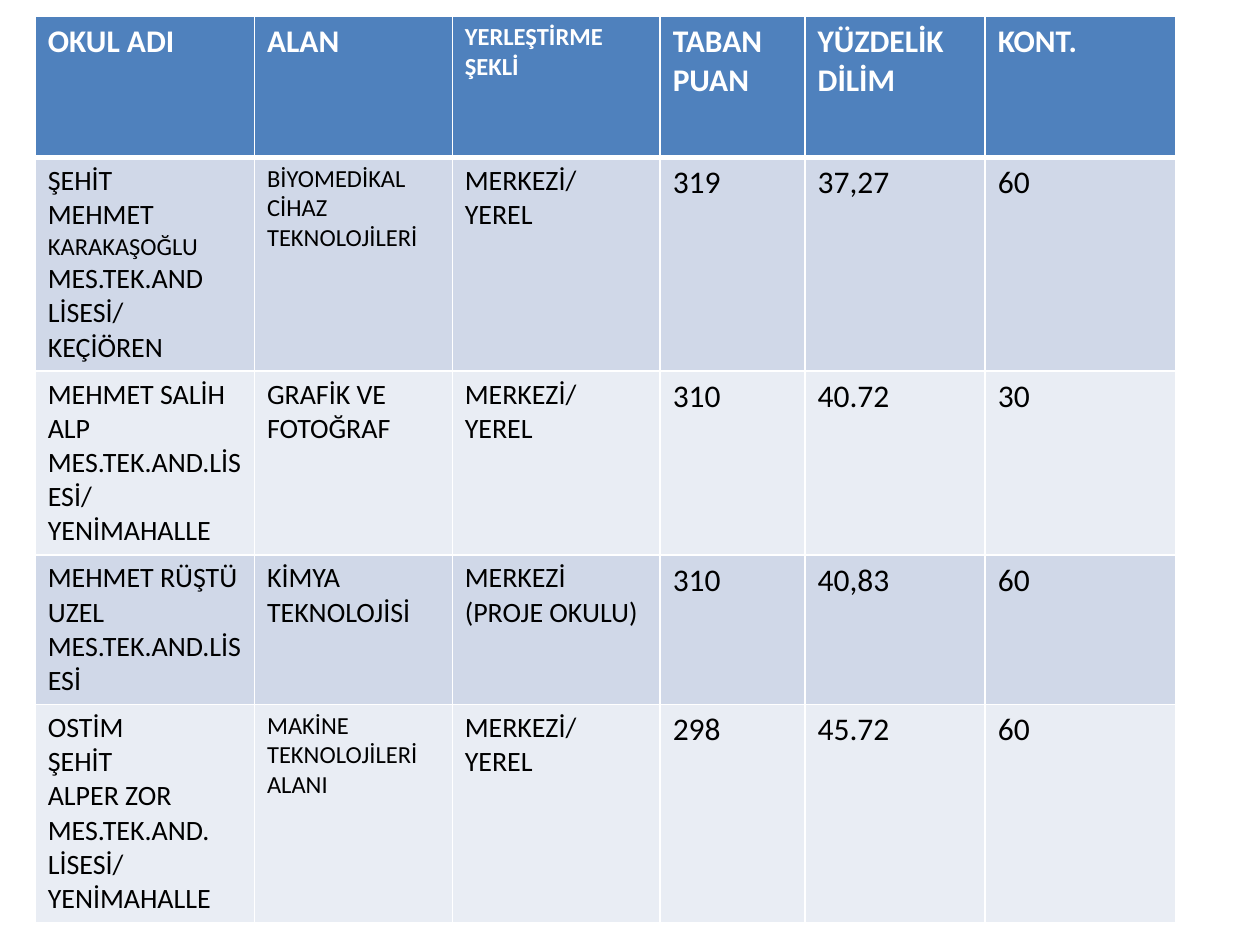
"""Build a slide with a table of vocational schools and their entry scores."""
from dataclasses import dataclass

from lxml.etree import SubElement
from pptx import Presentation
from pptx.dml.color import RGBColor
from pptx.oxml.ns import qn
from pptx.table import _Cell as Cell
from pptx.util import Inches, Pt

FONT = "Calibri"
WHITE, BLACK = "FFFFFF", "000000"
HEADER_FILL = "4F81BD"
BAND_FILLS = ("D0D8E8", "E9EDF4")
THIN, THICK = 1, 3
COLUMN_WIDTHS = (1.74, 1.57, 1.65, 1.15, 1.43, 1.51)
ROW_HEIGHTS = (1.12, 1.67, 1.43, 1.17, 1.7)


@dataclass(frozen=True)
class Entry:
    """Lines of one cell, their size, and sizes of single lines that differ."""
    text: str
    size: float = 18
    exceptions: tuple[tuple[int, float], ...] = ()


@dataclass(frozen=True)
class Look:
    """Colours, weight and horizontal rules of a table row."""
    fill: str
    ink: str
    bold: bool
    top: float
    bottom: float


HEADER = (
    Entry("OKUL ADI"),
    Entry("ALAN"),
    Entry("YERLEŞTİRME ŞEKLİ", 14),
    Entry("TABAN PUAN"),
    Entry("YÜZDELİK\nDİLİM"),
    Entry("KONT."),
)
CENTRAL_OR_LOCAL = Entry("MERKEZİ/\nYEREL", 16)
SCHOOLS = (
    (
        Entry("ŞEHİT\nMEHMET\nKARAKAŞOĞLU\nMES.TEK.AND\nLİSESİ/\nKEÇİÖREN", 16, ((2, 14),)),
        Entry("BİYOMEDİKAL\nCİHAZ\nTEKNOLOJİLERİ", 14),
        CENTRAL_OR_LOCAL, Entry("319"), Entry("37,27"), Entry("60"),
    ),
    (
        Entry("MEHMET SALİH ALP\nMES.TEK.AND.LİSESİ/\nYENİMAHALLE", 16),
        Entry("GRAFİK VE FOTOĞRAF", 16),
        CENTRAL_OR_LOCAL, Entry("310"), Entry("40.72"), Entry("30"),
    ),
    (
        Entry("MEHMET RÜŞTÜ UZEL MES.TEK.AND.LİSESİ", 16),
        Entry("KİMYA TEKNOLOJİSİ", 16),
        Entry("MERKEZİ\n(PROJE OKULU)", 16),
        Entry("310"), Entry("40,83"), Entry("60"),
    ),
    (
        Entry("OSTİM\nŞEHİT\nALPER ZOR\nMES.TEK.AND.\nLİSESİ/\nYENİMAHALLE", 16),
        Entry("MAKİNE\nTEKNOLOJİLERİ ALANI", 14),
        CENTRAL_OR_LOCAL, Entry("298"), Entry("45.72"), Entry("60"),
    ),
)


def colour(code: str) -> RGBColor:
    """Turn a hex string into a colour."""
    return RGBColor.from_string(code)


def rule_cell(cell: Cell, look: Look) -> None:
    """Draw the white borders of a cell."""
    properties = cell._tc.get_or_add_tcPr()
    widths = {"a:lnL": THIN, "a:lnR": THIN, "a:lnT": look.top, "a:lnB": look.bottom}
    for side, width in widths.items():
        line = SubElement(properties, qn(side), w=str(Pt(width)))
        SubElement(SubElement(line, qn("a:solidFill")), qn("a:srgbClr"), val=WHITE)


def fill_cell(cell: Cell, entry: Entry, look: Look) -> None:
    """Give a cell its borders, fill and text."""
    rule_cell(cell, look)
    cell.fill.solid()
    cell.fill.fore_color.rgb = colour(look.fill)
    cell.text = entry.text
    sizes = dict(entry.exceptions)
    for index, paragraph in enumerate(cell.text_frame.paragraphs):
        font = paragraph.font
        font.name = FONT
        font.size = Pt(sizes.get(index, entry.size))
        font.bold = look.bold
        font.color.rgb = colour(look.ink)


def row_look(row: int) -> Look:
    """Choose the look of a row from its position."""
    if row == 0:
        return Look(HEADER_FILL, WHITE, True, THIN, THICK)
    band = BAND_FILLS[(row - 1) % len(BAND_FILLS)]
    return Look(band, BLACK, False, THICK if row == 1 else THIN, THIN)


def main() -> None:
    """Create the presentation and save it."""
    presentation = Presentation()
    presentation.slide_width, presentation.slide_height = Inches(10), Inches(7.5)
    slide = presentation.slides.add_slide(presentation.slide_layouts[6])
    schools = slide.shapes.add_table(
        len(ROW_HEIGHTS), len(COLUMN_WIDTHS), Inches(0.28), Inches(0.13),
        Inches(sum(COLUMN_WIDTHS)), Inches(sum(ROW_HEIGHTS)),
    ).table
    for column, width in zip(schools.columns, COLUMN_WIDTHS):
        column.width = Inches(width)
    for row, height in zip(schools.rows, ROW_HEIGHTS):
        row.height = Inches(height)
    for row, entries in enumerate((HEADER, *SCHOOLS)):
        for column, entry in enumerate(entries):
            fill_cell(schools.cell(row, column), entry, row_look(row))
    presentation.save("out.pptx")


if __name__ == "__main__":
    main()
